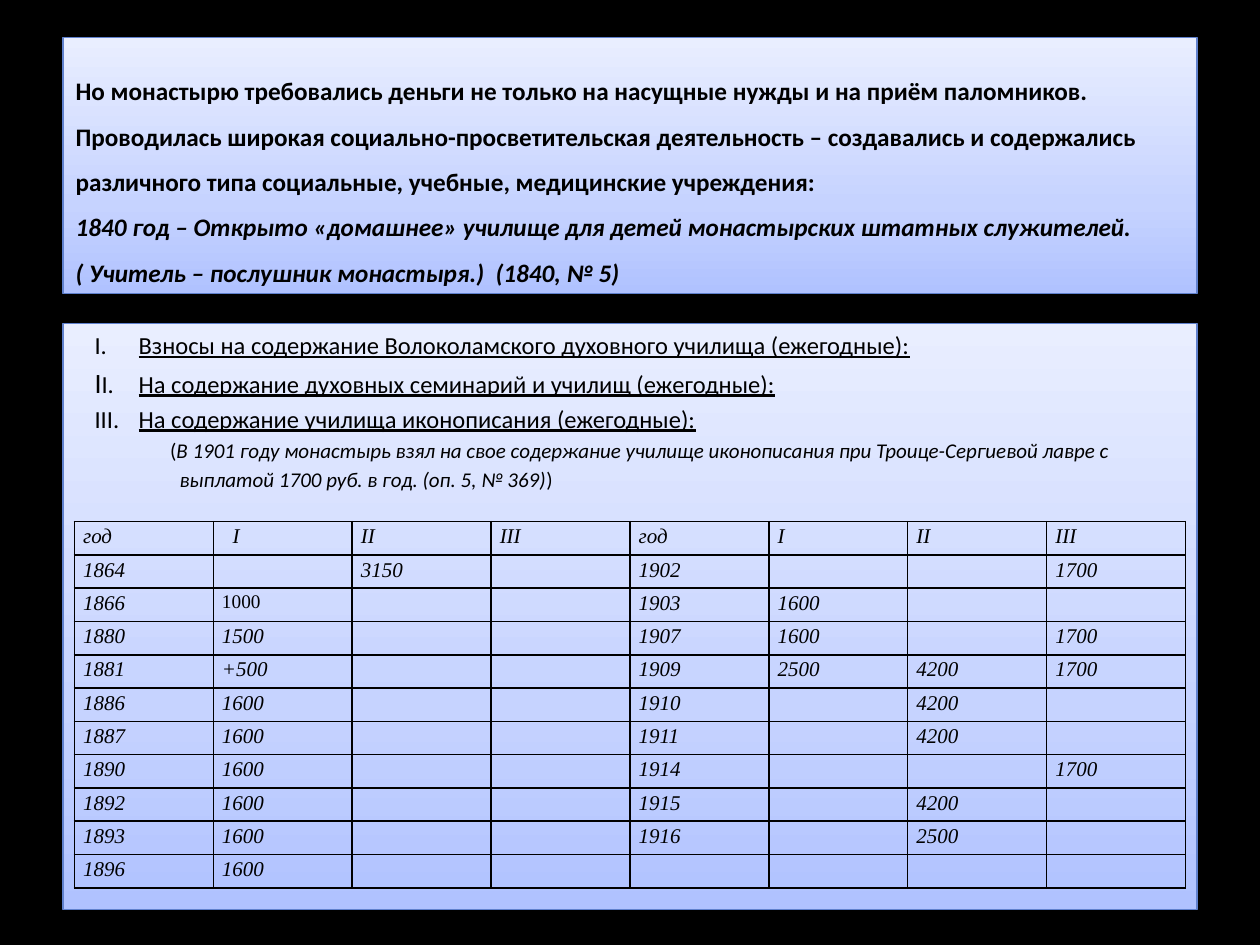
from dataclasses import dataclass

from lxml import etree
from pptx import Presentation
from pptx.dml.color import RGBColor
from pptx.enum.text import MSO_ANCHOR, MSO_AUTO_SIZE, PP_ALIGN
from pptx.oxml import parse_xml
from pptx.oxml.ns import nsdecls, qn
from pptx.util import Pt

LEFT, JUSTIFY = PP_ALIGN.LEFT, PP_ALIGN.JUSTIFY
TOP, BOTTOM = MSO_ANCHOR.TOP, MSO_ANCHOR.BOTTOM
NO_AUTOFIT = MSO_AUTO_SIZE.NONE


@dataclass(frozen=True)
class Theme:
    background: str = "000000"
    text: str = "000000"
    outline: str = "6081CD"
    gradient: tuple = ((0, "B0C2FF"), (35, "C6D3FF"), (100, "E9EEFF"))
    font: str = "Calibri"
    table_font: str = "Times New Roman"
    title_size: float = 14.4
    list_size: float = 14
    large_size: float = 16
    note_size: float = 12
    table_size: float = 12
    small_size: float = 11


THEME = Theme()

INTRO = (
    "Но монастырю требовались деньги не только на насущные нужды и на приём "
    "паломников. Проводилась широкая социально-просветительская деятельность – "
    "создавались и содержались различного типа социальные, учебные, медицинские "
    "учреждения:"
)
SCHOOL = (
    "1840 год – Открыто «домашнее» училище для детей монастырских штатных "
    "служителей.( Учитель – послушник монастыря.)  (1840, № 5)"
)
EXPENSES = (
    ((("I.", THEME.list_size),),
     "Взносы на содержание Волоколамского духовного училища (ежегодные):"),
    ((("I", THEME.large_size), ("I.", THEME.list_size)),
     "На содержание духовных семинарий и училищ (ежегодные):"),
    ((("III.", THEME.list_size),),
     "На содержание училища иконописания (ежегодные):"),
)
# Left indent, then runs of (text, italic)
NOTES = (
    (54, (("(", False),
          ("В 1901 году монастырь взял на свое содержание училище иконописания "
           "при Троице-Сергиевой лавре с", True))),
    (59.5, (("выплатой 1700 руб. в год. (оп. 5, № 369)", True), (")", False))),
)
PAYMENTS = (
    ("год", "I", "II", "III", "год", "I", "II", "III"),
    ("1864", "", "3150", "", "1902", "", "", "1700"),
    ("1866", "1000", "", "", "1903", "1600", "", ""),
    ("1880", "1500", "", "", "1907", "1600", "", "1700"),
    ("1881", "+500", "", "", "1909", "2500", "4200", "1700"),
    ("1886", "1600", "", "", "1910", "", "4200", ""),
    ("1887", "1600", "", "", "1911", "", "4200", ""),
    ("1890", "1600", "", "", "1914", "", "", "1700"),
    ("1892", "1600", "", "", "1915", "", "4200", ""),
    ("1893", "1600", "", "", "1916", "", "2500", ""),
    ("1896", "1600", "", "", "", "", "", ""),
)


def add_run(paragraph, text, size, font=THEME.font, **styles):
    run = paragraph.add_run()
    run.text = text
    run.font.name = font
    run.font.size = Pt(size)
    run.font.color.rgb = RGBColor.from_string(THEME.text)
    for style, value in styles.items():
        setattr(run.font, style, value)


def format_panel(shape, left, top, width, height, anchor):
    """Place a placeholder and give it the gradient, outline and soft shadow."""
    shape.left, shape.top = Pt(left), Pt(top)
    shape.width, shape.height = Pt(width), Pt(height)
    stops = "".join(
        f'<a:gs pos="{position * 1000}"><a:srgbClr val="{color}"/></a:gs>'
        for position, color in THEME.gradient
    )
    properties = shape._element.spPr
    properties.append(parse_xml(
        f'<a:gradFill {nsdecls("a")} rotWithShape="1"><a:gsLst>{stops}</a:gsLst>'
        '<a:lin ang="16200000" scaled="0"/></a:gradFill>'
    ))
    shape.line.color.rgb = RGBColor.from_string(THEME.outline)
    shape.line.width = Pt(0.75)
    properties.append(parse_xml(
        f'<a:effectLst {nsdecls("a")}><a:outerShdw blurRad="{Pt(3.1)}" '
        f'dist="{Pt(1.6)}" dir="5400000" rotWithShape="0"><a:srgbClr val="000000">'
        '<a:alpha val="38000"/></a:srgbClr></a:outerShdw></a:effectLst>'
    ))
    frame = shape.text_frame
    frame.word_wrap = True
    frame.auto_size = NO_AUTOFIT
    frame.vertical_anchor = anchor


def fill_title(frame):
    paragraph = frame.paragraphs[0]
    paragraph.alignment = LEFT
    paragraph.line_spacing = 1.5
    add_run(paragraph, INTRO, THEME.title_size, bold=True)
    paragraph.add_line_break()
    add_run(paragraph, SCHOOL, THEME.title_size, bold=True, italic=True)


def set_indent(paragraph, left, first_line=0):
    """Set the indents and switch off the inherited bullet."""
    properties = paragraph._p.get_or_add_pPr()
    properties.set("marL", str(Pt(left)))
    properties.set("indent", str(Pt(first_line)))
    etree.SubElement(properties, qn("a:buNone"))


def fill_expenses(frame):
    for index, (numeral, text) in enumerate(EXPENSES):
        paragraph = frame.add_paragraph() if index else frame.paragraphs[0]
        set_indent(paragraph, 36, -25.2)
        if index == 0:
            paragraph.space_before = Pt(0)
        for part, size in numeral:
            add_run(paragraph, part, size)
        add_run(paragraph, "\t", THEME.list_size)
        add_run(paragraph, text, THEME.list_size, underline=True)
    for left, runs in NOTES:
        paragraph = frame.add_paragraph()
        set_indent(paragraph, left)
        for text, italic in runs:
            add_run(paragraph, text, THEME.note_size, italic=italic)


def set_borders(cell):
    properties = cell._tc.get_or_add_tcPr()
    for index, side in enumerate(("lnL", "lnR", "lnT", "lnB")):
        properties.insert(index, parse_xml(
            f'<a:{side} {nsdecls("a")} w="{Pt(1)}"><a:solidFill>'
            f'<a:srgbClr val="{THEME.text}"/></a:solidFill></a:{side}>'
        ))


def fill_cell(cell, text):
    cell.margin_left = cell.margin_right = Pt(5)
    cell.margin_top = cell.margin_bottom = 0
    cell.fill.background()
    set_borders(cell)
    paragraph = cell.text_frame.paragraphs[0]
    paragraph.alignment = JUSTIFY
    paragraph.line_spacing = 1.15
    if not text:
        etree.SubElement(paragraph._p, qn("a:endParaRPr"),
                         sz=str(THEME.table_size * 100))
        return
    upright = text == "1000"
    size = THEME.small_size if upright else THEME.table_size
    add_run(paragraph, text, size, THEME.table_font, italic=not upright)


def add_payments_table(slide, left, top, width, height):
    rows, columns = len(PAYMENTS), len(PAYMENTS[0])
    table = slide.shapes.add_table(
        rows, columns, Pt(left), Pt(top), Pt(width), Pt(height)
    ).table
    table.first_row = table.horz_banding = False
    for row_index, values in enumerate(PAYMENTS):
        for column_index, value in enumerate(values):
            fill_cell(table.cell(row_index, column_index), value)
    table.cell(0, 1).margin_left = Pt(11)


def main():
    presentation = Presentation()
    presentation.slide_width, presentation.slide_height = Pt(720), Pt(540)
    slide = presentation.slides.add_slide(presentation.slide_layouts[1])
    slide.background.fill.solid()
    slide.background.fill.fore_color.rgb = RGBColor.from_string(THEME.background)

    title, body = slide.placeholders
    format_panel(title, 36, 21.6, 648, 146.2, BOTTOM)
    fill_title(title.text_frame)
    format_panel(body, 36, 185, 648, 334.8, TOP)
    fill_expenses(body.text_frame)
    add_payments_table(slide, 42.5, 298.1, 635, 209.5)
    presentation.save("out.pptx")


if __name__ == "__main__":
    main()
